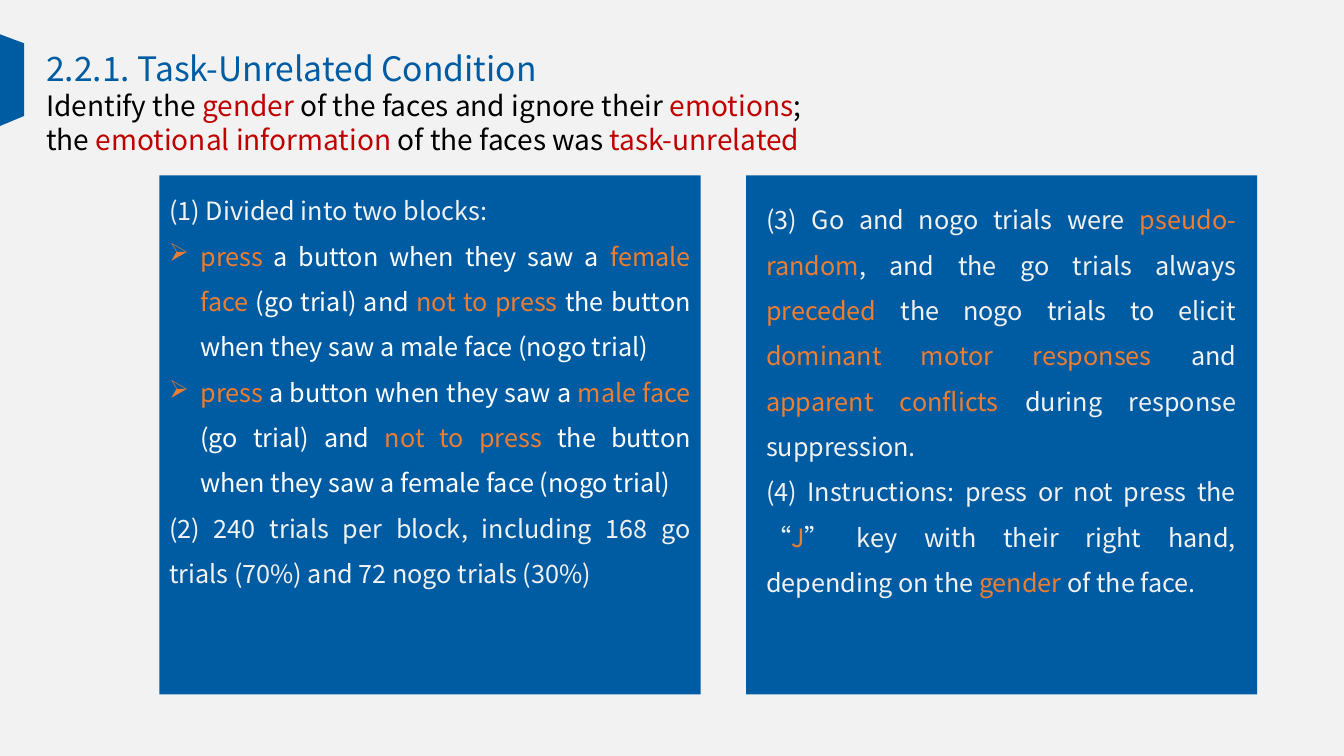
from dataclasses import dataclass

from lxml import etree
from pptx import Presentation
from pptx import util as u
from pptx.dml.color import RGBColor
from pptx.enum import shapes, text
from pptx.oxml.ns import qn

FONT = "Noto Sans CJK SC"
BLUE, ORANGE, RED = "005CA2", "ED7D31", "C00000"
BLACK, WHITE, PALE = "000000", "FFFFFF", "F2F2F2"
BULLET_INDENT = 0.31


@dataclass
class Line:
    """One paragraph; words between asterisks take the accent colour."""
    words: str
    color: str
    bullet: bool = False


@dataclass
class TextBlock:
    left: float
    top: float
    width: float
    height: float
    size: int
    accent: str
    lines: list[Line]
    body: bool = False
    wrap: bool = True


@dataclass
class Panel:
    left: float
    width: float
    block: TextBlock


PANEL_TOP, PANEL_HEIGHT = 1.74, 5.15

TITLE = TextBlock(0.36, 0.43, 5.25, 0.5, 24, BLUE, [
    Line("2.2.1. Task-Unrelated Condition", BLUE),
], wrap=False)

SUBTITLE = TextBlock(0.36, 0.83, 8.51, 0.77, 20, RED, [
    Line("Identify the *gender *of the faces and ignore their *emotions*;", BLACK),
    Line("the *emotional information* of the faces was *task-unrelated*", BLACK),
])

PANELS = [
    Panel(1.58, 5.37, TextBlock(1.58, PANEL_TOP, 5.37, PANEL_HEIGHT, 18, ORANGE, [
        Line("(1) Divided into two blocks:", PALE),
        Line("*press *a button when they saw a* female face* (go trial) and "
             "*not to press* the button when they saw a male face (nogo trial)",
             WHITE, bullet=True),
        Line("*press* a button when they saw a *male face* (go trial) and "
             "*not to press* the button when they saw a female face (nogo trial)",
             WHITE, bullet=True),
        Line("(2) 240 trials per block, including 168 go trials (70%) "
             "and 72 nogo trials (30%)", PALE),
    ], body=True)),
    Panel(7.4, 5.07, TextBlock(7.5, 1.83, 4.86, 5.06, 18, ORANGE, [
        Line("(3) Go and nogo trials were *pseudo-random*, and the go trials always "
             "*preceded* the nogo trials to elicit *dominant motor responses* and "
             "*apparent conflicts *during response suppression.", PALE),
        Line("(4) Instructions: press or not press the “*J*” key with their right "
             "hand, depending on the *gender* of the face.", PALE),
    ], body=True)),
]


def paint(fill, color: str) -> None:
    fill.solid()
    fill.fore_color.rgb = RGBColor.from_string(color)


def style_solid(shape, color: str) -> None:
    paint(shape.fill, color)
    shape.line.fill.background()
    shape.shadow.inherit = False


def add_bullet(paragraph) -> None:
    properties = paragraph._p.get_or_add_pPr()
    indent = u.Inches(BULLET_INDENT)
    properties.set("marL", str(indent))
    properties.set("indent", str(-indent))
    etree.SubElement(properties, qn("a:buChar")).set("char", "➢")


def add_run(paragraph, words: str, size: int, color: str) -> None:
    run = paragraph.add_run()
    run.text = words
    run.font.size = u.Pt(size)
    run.font.name = FONT
    run.font.color.rgb = RGBColor.from_string(color)
    east_asian = etree.SubElement(run._r.get_or_add_rPr(), qn("a:ea"))
    east_asian.set("typeface", FONT)


def add_text(slide, block: TextBlock) -> None:
    box = slide.shapes.add_textbox(
        u.Inches(block.left), u.Inches(block.top),
        u.Inches(block.width), u.Inches(block.height))
    frame = box.text_frame
    frame.word_wrap = block.wrap
    for index, line in enumerate(block.lines):
        paragraph = frame.add_paragraph() if index else frame.paragraphs[0]
        if block.body:
            paragraph.alignment = text.PP_ALIGN.JUSTIFY
            paragraph.line_spacing = 1.5
        if line.bullet:
            add_bullet(paragraph)
        for part, words in enumerate(line.words.split("*")):
            if words:
                color = block.accent if part % 2 else line.color
                add_run(paragraph, words, block.size, color)


def add_panel(slide, panel: Panel) -> None:
    rectangle = slide.shapes.add_shape(
        shapes.MSO_SHAPE.RECTANGLE, u.Inches(panel.left), u.Inches(PANEL_TOP),
        u.Inches(panel.width), u.Inches(PANEL_HEIGHT))
    style_solid(rectangle, BLUE)
    add_text(slide, panel.block)


def add_edge_tab(slide) -> None:
    builder = slide.shapes.build_freeform(0, u.Inches(0.34))
    corners = [(0.24, 0.43), (0.24, 1.15), (0, 1.25)]
    builder.add_line_segments([(u.Inches(x), u.Inches(y)) for x, y in corners])
    style_solid(builder.convert_to_shape(), BLUE)


def main() -> None:
    presentation = Presentation()
    presentation.slide_width = u.Inches(13.33)
    presentation.slide_height = u.Inches(7.5)
    slide = presentation.slides.add_slide(presentation.slide_layouts[6])
    paint(slide.background.fill, PALE)
    add_edge_tab(slide)
    add_text(slide, TITLE)
    for panel in PANELS:
        add_panel(slide, panel)
    add_text(slide, SUBTITLE)
    presentation.save("out.pptx")


if __name__ == "__main__":
    main()
